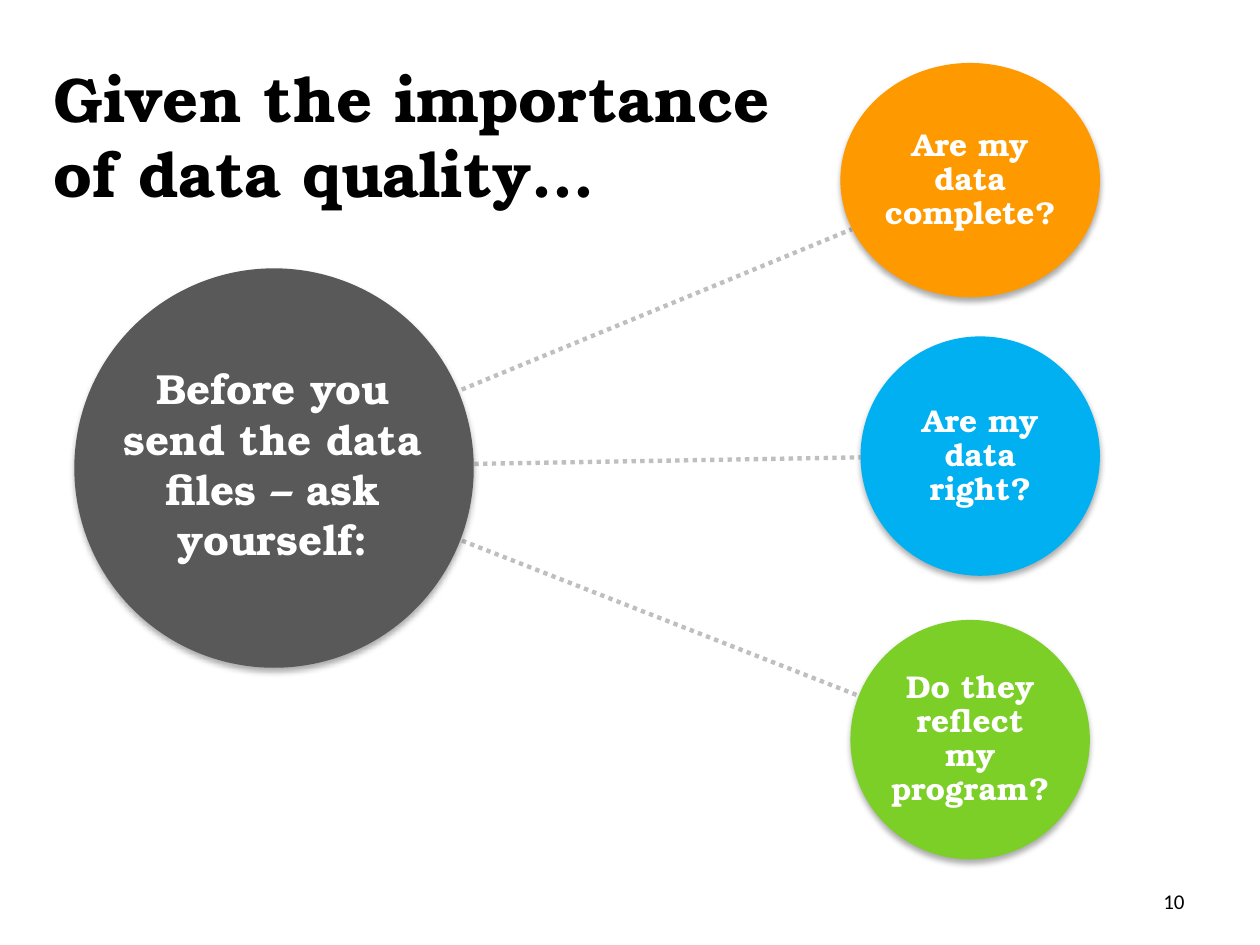
from lxml import etree
from pptx import Presentation
from pptx.dml.color import RGBColor
from pptx.enum.dml import MSO_LINE
from pptx.enum.shapes import MSO_CONNECTOR, MSO_SHAPE
from pptx.enum.text import MSO_ANCHOR as Anchor, PP_ALIGN as Align
from pptx.oxml.ns import qn
from pptx.util import Inches, Pt

BLACK = RGBColor(0x00, 0x00, 0x00)
WHITE = RGBColor(0xFF, 0xFF, 0xFF)
GRAY = RGBColor(0x59, 0x59, 0x59)
SILVER = RGBColor(0xBF, 0xBF, 0xBF)
ORANGE = RGBColor(0xFF, 0x99, 0x00)
BLUE = RGBColor(0x00, 0xB0, 0xF0)
GREEN = RGBColor(0x7B, 0xCF, 0x27)
SERIF = "TeX Gyre Bonum"

# Question, circle colour, circle box, text box size, spoke start and end
ASKS = [
    ("Are my data complete?", ORANGE, (6.67, 0.5, 2.06, 1.86),
     (1.46, 1.31), (3.28, 3.25, 6.76, 1.82)),
    ("Are my data right?", BLUE, (6.83, 2.67, 1.9, 1.9),
     (1.34, 1.34), (3.28, 3.69, 6.83, 3.63)),
    ("Do they reflect my program?", GREEN, (6.75, 4.92, 1.9, 1.9),
     (1.34, 1.34), (3.28, 4.14, 6.81, 5.52)),
]


def add_spoke(slide, ends):
    spoke = slide.shapes.add_connector(
        MSO_CONNECTOR.STRAIGHT, *map(Inches, ends))
    spoke.line.color.rgb = SILVER
    spoke.line.width = Pt(2.5)
    spoke.line.dash_style = MSO_LINE.ROUND_DOT
    etree.SubElement(spoke._element.spPr, qn("a:effectLst"))


def add_disc(slide, box, color):
    disc = slide.shapes.add_shape(MSO_SHAPE.OVAL, *map(Inches, box))
    disc.fill.solid()
    disc.fill.fore_color.rgb = color
    disc.line.fill.background()
    # Soft shadow straight below the disc
    disc.shadow.inherit = False
    effects = disc._element.spPr.find(qn("a:effectLst"))
    shade = etree.SubElement(
        effects, qn("a:outerShdw"), blurRad=str(Pt(3.5)),
        dist=str(Pt(2.2)), dir="5400000", algn="ctr", rotWithShape="0")
    tint = etree.SubElement(shade, qn("a:srgbClr"), val=str(BLACK))
    etree.SubElement(tint, qn("a:alpha"), val="32000")


def add_text(slide, box, text, size, color, align=Align.LEFT,
             font=SERIF, bold=True, anchor=Anchor.TOP):
    frame = slide.shapes.add_textbox(*map(Inches, box)).text_frame
    frame.word_wrap = True
    frame.vertical_anchor = anchor
    line = frame.paragraphs[0]
    line.text = text
    line.alignment = align
    line.font.name = font
    line.font.size = Pt(size)
    line.font.bold = bold
    line.font.color.rgb = color
    return frame


def add_ask(slide, text, color, box, size):
    add_disc(slide, box, color)
    # Centre the text box in the disc
    left, top, width, height = box
    wide, high = size
    inner = (left + (width - wide) / 2, top + (height - high) / 2, wide, high)
    frame = add_text(slide, inner, text, 18, WHITE, Align.CENTER,
                     anchor=Anchor.MIDDLE)
    frame.margin_left = frame.margin_right = Inches(0.01)
    frame.margin_top = frame.margin_bottom = Inches(0.01)
    frame.paragraphs[0].line_spacing = 0.9


def main():
    deck = Presentation()
    deck.slide_width, deck.slide_height = Inches(10), Inches(7.5)
    slide = deck.slides.add_slide(deck.slide_layouts[6])

    # Spokes lie behind the discs
    for *_, ends in reversed(ASKS):
        add_spoke(slide, ends)

    # Hub and the three questions
    add_disc(slide, (0.59, 2.13, 3.17, 3.17), GRAY)
    for text, color, box, size, _ in ASKS:
        add_ask(slide, text, color, box, size)
    add_text(slide, (0.83, 2.83, 2.67, 1.72),
             "Before you send the data files – ask yourself:",
             24, WHITE, Align.CENTER)

    # Page number and title
    add_text(slide, (7.17, 6.95, 2.33, 0.4), "10", 12, BLACK, Align.RIGHT,
             font="Calibri", bold=False, anchor=Anchor.MIDDLE)
    add_text(slide, (0.33, 0.42, 6.33, 1.31),
             "Given the importance of data quality…", 36, BLACK)

    deck.save("out.pptx")


if __name__ == "__main__":
    main()
